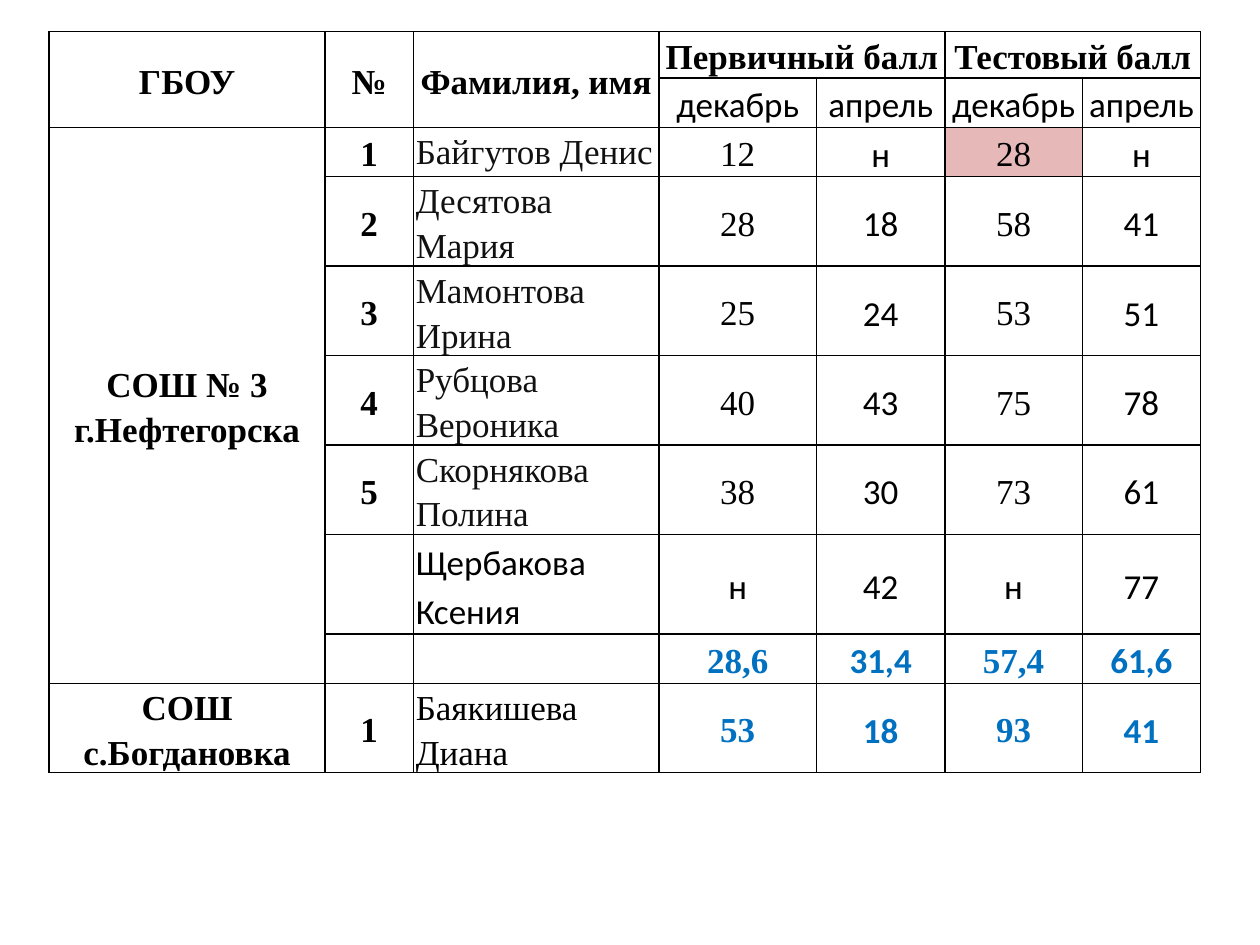
from pptx import Presentation
from pptx.dml.color import RGBColor
from pptx.enum.text import MSO_ANCHOR, PP_ALIGN
from pptx.oxml import parse_xml
from pptx.oxml.ns import nsdecls
from pptx.util import Inches, Pt

TOP, MIDDLE, BOTTOM = MSO_ANCHOR.TOP, MSO_ANCHOR.MIDDLE, MSO_ANCHOR.BOTTOM
LEFT, CENTER = PP_ALIGN.LEFT, PP_ALIGN.CENTER

BLACK = RGBColor(0x00, 0x00, 0x00)
DARK = RGBColor(0x11, 0x11, 0x11)
BLUE = RGBColor(0x00, 0x70, 0xC0)
WHITE = RGBColor(0xFF, 0xFF, 0xFF)
PINK = RGBColor(0xE6, 0xB9, 0xB8)

COL_WIDTHS = [2.19, 0.7, 1.95, 1.25, 1.02, 1.09, 0.94]
ROW_HEIGHTS = [0.37, 0.39, 0.39] + [0.71] * 4 + [0.79, 0.39, 0.71]
ROWS = [
    ["ГБОУ", "№", "Фамилия, имя", "Первичный балл", "", "Тестовый балл", ""],
    ["", "", "", "декабрь", "апрель", "декабрь", "апрель"],
    ["СОШ № 3 г.Нефтегорска", "1", "Байгутов Денис", "12", "н", "28", "н"],
    ["", "2", "Десятова Мария", "28", "18", "58", "41"],
    ["", "3", "Мамонтова Ирина", "25", "24", "53", "51"],
    ["", "4", "Рубцова Вероника", "40", "43", "75", "78"],
    ["", "5", "Скорнякова Полина", "38", "30", "73", "61"],
    ["", "", "Щербакова Ксения", "н", "42", "н", "77"],
    ["", "", "", "28,6", "31,4", "57,4", "61,6"],
    ["СОШ с.Богдановка", "1", "Баякишева Диана", "53", "18", "93", "41"],
]
# First and last cell of each merged block
MERGES = [((0, 0), (1, 0)), ((0, 1), (1, 1)), ((0, 2), (1, 2)),
          ((0, 3), (0, 4)), ((0, 5), (0, 6)), ((2, 0), (8, 0))]

MONTHS, FIRST, ADDED, AVERAGE, LAST = 1, 2, 7, 8, 9
NAME, SCORES, APRIL = 2, 3, (4, 6)


class Deck:
    serif, sans = "Times New Roman", "Calibri"
    size = Pt(20)
    line_spacing = 1.15
    border = Pt(1)

    def __init__(self, prs):
        self.s = prs.slides.add_slide(prs.slide_layouts[6])

    def table(self, left, top):
        frame = self.s.shapes.add_table(
            len(ROWS), len(COL_WIDTHS), Inches(left), Inches(top),
            Inches(sum(COL_WIDTHS)), Inches(sum(ROW_HEIGHTS)))
        table = frame.table
        table.first_row = table.horz_banding = False
        for column, width in zip(table.columns, COL_WIDTHS):
            column.width = Inches(width)
        for row, height in zip(table.rows, ROW_HEIGHTS):
            row.height = Inches(height)
        for r, texts in enumerate(ROWS):
            for c, text in enumerate(texts):
                self.cell(table.cell(r, c), r, c, text)
        for first, last in MERGES:
            table.cell(*first).merge(table.cell(*last))

    def cell(self, cell, r, c, text):
        is_name = c == NAME and r >= FIRST
        cell.margin_left = cell.margin_right = Inches(0.02)
        cell.margin_top = cell.margin_bottom = 0
        cell.vertical_anchor = MIDDLE
        if is_name and r < LAST:
            cell.vertical_anchor = TOP if r == FIRST else BOTTOM

        # Text
        cell.text_frame.text = text
        p = cell.text_frame.paragraphs[0]
        p.alignment = LEFT if is_name else CENTER
        p.line_spacing = self.line_spacing
        is_sans = r in (MONTHS, ADDED) or text == "н" or (c in APRIL and r >= FIRST)
        is_total = r >= AVERAGE and c >= SCORES
        for run in p.runs:
            run.font.name = self.sans if is_sans else self.serif
            run.font.size = self.size
            run.font.bold = r == 0 or c < NAME or is_total
            run.font.color.rgb = BLACK
            if is_total:
                run.font.color.rgb = BLUE
            elif is_name and r < ADDED:
                run.font.color.rgb = DARK

        # Fill
        if (r, c) == (FIRST, 5):
            self.fill(cell, PINK)
        elif (is_name and r < LAST) or (r, c) == (FIRST, 6):
            self.fill(cell, WHITE)
        else:
            cell.fill.background()
        self.borders(cell)

    def fill(self, cell, color):
        cell.fill.solid()
        cell.fill.fore_color.rgb = color

    def borders(self, cell):
        tc_pr = cell._tc.get_or_add_tcPr()
        for i, side in enumerate("LRTB"):
            tc_pr.insert(i, parse_xml(
                f'<a:ln{side} {nsdecls("a")} w="{self.border}"><a:solidFill>'
                f'<a:srgbClr val="{BLACK}"/></a:solidFill></a:ln{side}>'))


def main():
    prs = Presentation()
    prs.slide_width, prs.slide_height = Inches(10), Inches(7.5)
    Deck(prs).table(0.39, 0.25)
    prs.save("out.pptx")


if __name__ == "__main__":
    main()
